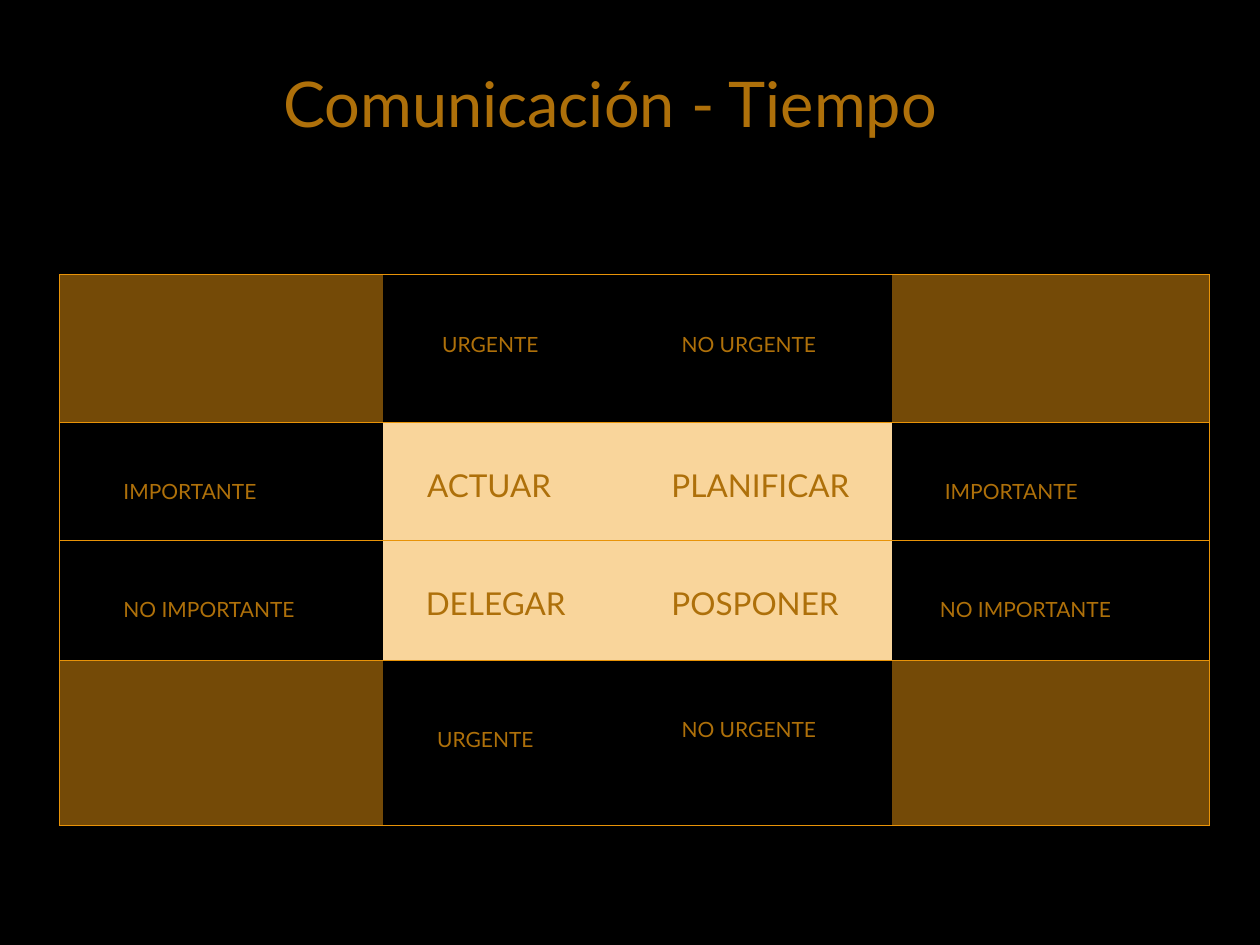
from typing import NamedTuple

from lxml import etree
from pptx import Presentation
from pptx.dml.color import RGBColor
from pptx.enum.text import MSO_ANCHOR
from pptx.oxml.ns import qn
from pptx.util import Inches, Pt

TOP = MSO_ANCHOR.TOP
FONT = "Lato"
HEX = {"back": "000000", "text": "AE700A", "line": "E89308",
       "dark": "744A07", "light": "F9D59B"}
COLS = (2.57, 2.02, 2.02, 2.52)
ROWS = (1.17, 0.94, 0.95, 1.31)


class Item(NamedTuple):
    text: str = ""
    left: float = 0.1
    top: float = 0.45
    size: int = 12
    fill: str = ""


def action(text: str, left: float) -> Item:
    return Item(text, left, 0.35, 18, "light")


CORNER = Item(fill="dark")
GRID = (
    (CORNER, Item("URGENTE", 0.47), Item("NO URGENTE", 0.35), CORNER),
    (Item("IMPORTANTE", 0.51), action("ACTUAR", 0.35),
     action("PLANIFICAR", 0.27), Item("IMPORTANTE", 0.42)),
    (Item("NO IMPORTANTE", 0.51), action("DELEGAR", 0.34),
     action("POSPONER", 0.27), Item("NO IMPORTANTE", 0.38)),
    (CORNER, Item("URGENTE", 0.43, 0.53), Item("NO URGENTE", 0.35), CORNER),
)


def color(name: str) -> RGBColor:
    return RGBColor.from_string(HEX[name])


def write(frame, text: str, size: int) -> None:
    para = frame.paragraphs[0]
    para.text = text
    for key, value in {"name": FONT, "size": Pt(size)}.items():
        setattr(para.font, key, value)
    para.font.color.rgb = color("text")


def edge(cell, sides: str) -> None:
    """Rule the given sides (of L, R, T, B) and clear the others."""
    props = cell._tc.get_or_add_tcPr()
    for spot, side in enumerate("LRTB"):
        line = etree.Element(qn(f"a:ln{side}"), w=str(Pt(0.5)))
        if side in sides:
            fill = etree.SubElement(line, qn("a:solidFill"))
            etree.SubElement(fill, qn("a:srgbClr"), val=HEX["line"])
        else:
            etree.SubElement(line, qn("a:noFill"))
        props.insert(spot, line)


def draw(cell, item: Item, sides: str) -> None:
    form = {"margin_left": Inches(item.left), "margin_top": Inches(item.top),
            "margin_right": Inches(0), "vertical_anchor": TOP}
    for key, value in form.items():
        setattr(cell, key, value)
    if item.fill:
        cell.fill.solid()
        cell.fill.fore_color.rgb = color(item.fill)
    else:
        cell.fill.background()
    write(cell.text_frame, item.text, item.size)
    edge(cell, sides)


def matrix(slide) -> None:
    table = slide.shapes.add_table(
        len(ROWS), len(COLS), Inches(0.47), Inches(2.18),
        Inches(sum(COLS)), Inches(sum(ROWS))).table
    table.first_row = table.horz_banding = False
    for col, width in zip(table.columns, COLS):
        col.width = Inches(width)
    for row, height in zip(table.rows, ROWS):
        row.height = Inches(height)
    ends = {0: "L", len(COLS) - 1: "R"}
    for r, items in enumerate(GRID):
        for c, item in enumerate(items):
            draw(table.cell(r, c), item, "TB" + ends.get(c, ""))


def main() -> None:
    deck = Presentation()
    deck.slide_width, deck.slide_height = Inches(10), Inches(7.5)
    slide = deck.slides.add_slide(deck.slide_layouts[6])
    slide.background.fill.solid()
    slide.background.fill.fore_color.rgb = color("back")
    matrix(slide)
    title = slide.shapes.add_textbox(
        Inches(2.15), Inches(0.46), Inches(5.42), Inches(0.71))
    title.text_frame.word_wrap = False
    write(title.text_frame, "Comunicación - Tiempo", 36)
    deck.save("out.pptx")


if __name__ == "__main__":
    main()
